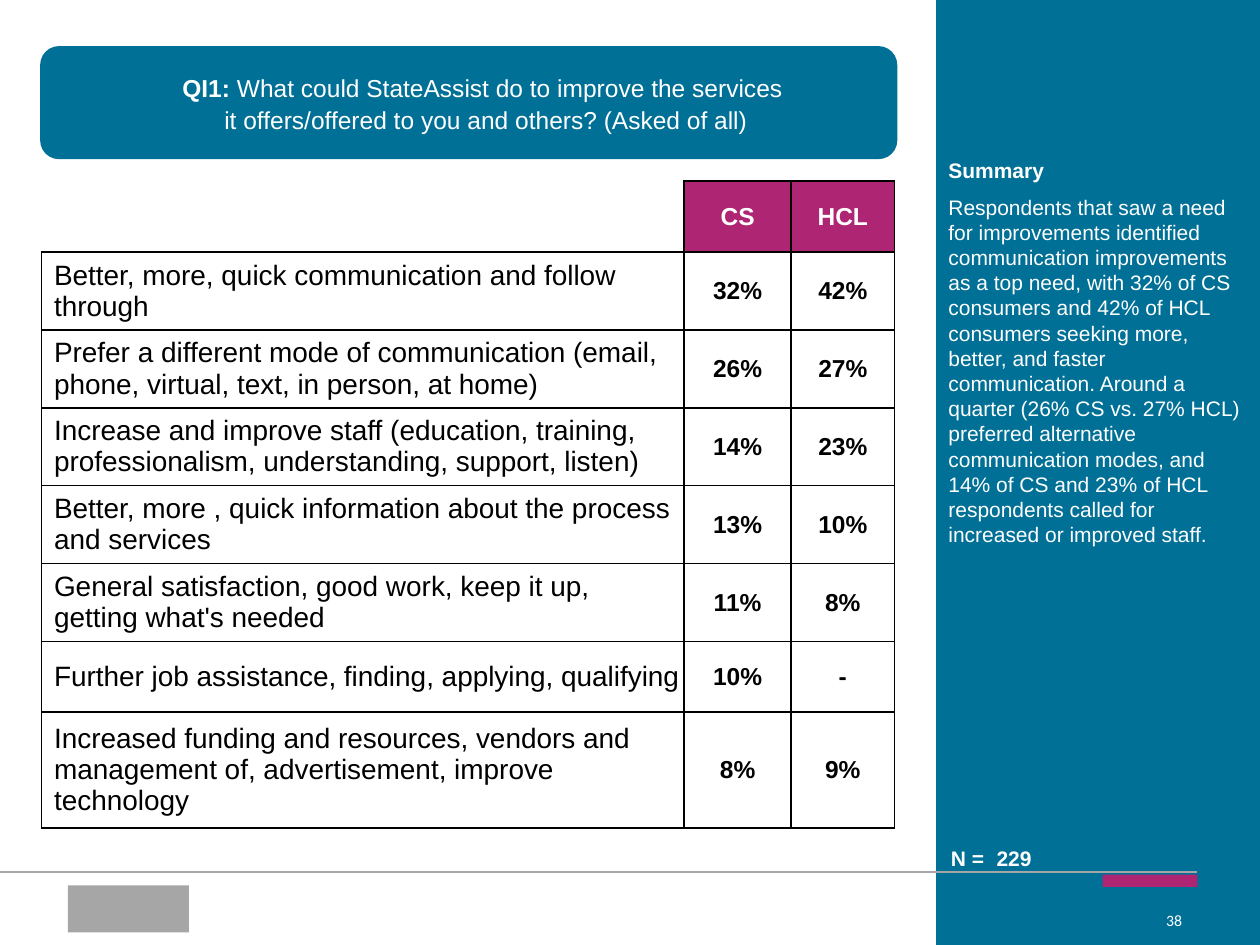
from lxml.etree import SubElement
from pptx import Presentation
from pptx.dml.color import RGBColor
from pptx.enum.shapes import MSO_CONNECTOR, MSO_SHAPE
from pptx.enum.text import MSO_ANCHOR, MSO_AUTO_SIZE, PP_ALIGN
from pptx.oxml.ns import qn
from pptx.util import Cm, Pt

COLORS = {
    "blue": "007096", "magenta": "AE2573", "gray": "A6A6A6",
    "white": "FFFFFF", "black": "000000",
}


def style(para, size, color, bold=False, font="Arial", align=PP_ALIGN.LEFT):
    para.alignment = align
    for span in para.runs:
        span.font.name = font
        span.font.size = Pt(size)
        span.font.bold = bold
        span.font.color.rgb = RGBColor.from_string(COLORS[color])


def add_text(page, place, text):
    box = page.shapes.add_textbox(*map(Cm, place))
    box.text_frame.word_wrap = True
    box.text_frame.text = text
    return box.text_frame


deck = Presentation()
deck.slide_width, deck.slide_height = Cm(25.4), Cm(19.05)
page = deck.slides.add_slide(deck.slide_layouts[5])

# Title panel, sidebar, footer accent and plain footer block
for kind, place, color in (
    (MSO_SHAPE.ROUNDED_RECTANGLE, (0.81, 0.93, 17.28, 2.28), "blue"),
    (MSO_SHAPE.RECTANGLE, (18.87, 0, 6.53, 19.05), "blue"),
    (MSO_SHAPE.RECTANGLE, (22.23, 17.63, 1.91, 0.25), "magenta"),
    (MSO_SHAPE.RECTANGLE, (1.37, 17.85, 2.44, 0.95), "gray"),
):
    panel = page.shapes.add_shape(kind, *map(Cm, place))
    panel.shadow.inherit = False
    panel.fill.solid()
    panel.fill.fore_color.rgb = RGBColor.from_string(COLORS[color])
    panel.line.fill.background()

# Footer rule
rule = page.shapes.add_connector(MSO_CONNECTOR.STRAIGHT, 0, Cm(17.58), Cm(24.13), Cm(17.58))
rule.line.color.rgb = RGBColor.from_string(COLORS["gray"])
rule.line.width = Pt(0.75)
SubElement(rule.element.spPr, qn("a:effectLst"))

# Question title, brought in front of its panel
title = page.shapes.title
title.left, title.top, title.width, title.height = map(Cm, (1.96, 1.35, 15.54, 1.85))
title.element.getparent().append(title.element)
frame = title.text_frame
frame.auto_size = MSO_AUTO_SIZE.NONE
frame.vertical_anchor = MSO_ANCHOR.TOP
frame.text = "QI1: \n it offers/offered to you and others? (Asked of all)"
frame.paragraphs[0].add_run().text = "What could StateAssist do to improve the services"
for para in frame.paragraphs:
    para.space_before = Pt(1.5)
    style(para, 14, "white", align=PP_ALIGN.CENTER)
frame.paragraphs[0].runs[0].font.bold = True

# Sidebar summary and sample size
SUMMARY = (
    "Respondents that saw a need for improvements identified communication "
    "improvements as a top need, with 32% of CS consumers and 42% of HCL "
    "consumers seeking more, better, and faster communication. Around a quarter "
    "(26% CS vs. 27% HCL) preferred alternative communication modes, and 14% of "
    "CS and 23% of HCL respondents called for increased or improved staff."
)
for place, text, bold in (
    ((18.87, 3.05, 6.53, 0.77), "Summary", True),
    ((18.87, 3.79, 6.53, 12.5), SUMMARY, False),
    ((18.92, 16.92, 1.65, 0.77), "N =", True),
    ((19.84, 16.92, 1.3, 0.77), "229", True),
):
    style(add_text(page, place, text).paragraphs[0], 12, "white", bold)

# Page number
frame = add_text(page, (14.5, 18.17, 9.58, 0.76), "38")
frame.vertical_anchor = MSO_ANCHOR.MIDDLE
style(frame.paragraphs[0], 9, "white", font="Calibri", align=PP_ALIGN.RIGHT)

# Table of improvements
ROWS = (
    ("", "CS", "HCL"),
    ("Better, more, quick communication and follow through", "32%", "42%"),
    ("Prefer a different mode of communication (email, phone, virtual, text, "
     "in person, at home)", "26%", "27%"),
    ("Increase and improve staff (education, training, professionalism, "
     "understanding, support, listen)", "14%", "23%"),
    ("Better, more , quick information about the process and services", "13%", "10%"),
    ("General satisfaction, good work, keep it up, getting what's needed", "11%", "8%"),
    ("Further job assistance, finding, applying, qualifying", "10%", "-"),
    ("Increased funding and resources, vendors and management of, "
     "advertisement, improve technology", "8%", "9%"),
)
HEIGHTS = (1.43, *[1.57] * 5, 1.42, 2.34)
table = page.shapes.add_table(len(ROWS), 3, Cm(0.84), Cm(3.65), Cm(17.19), Cm(13.04)).table
table.first_row = table.horz_banding = False
for column, width in zip(table.columns, (12.95, 2.16, 2.08)):
    column.width = Cm(width)
for row, height in zip(table.rows, HEIGHTS):
    row.height = Cm(height)

for r, texts in enumerate(ROWS):
    for c, text in enumerate(texts):
        cell = table.cell(r, c)
        cell.text = text
        cell.vertical_anchor = MSO_ANCHOR.MIDDLE
        cell.margin_left = Cm(0 if c else 0.25)
        cell.margin_right = Cm(0 if c else 0.08)
        cell.margin_top = cell.margin_bottom = 0
        is_corner = r == c == 0
        for side in ("lnR", "lnB") if is_corner else ("lnL", "lnR", "lnT", "lnB"):
            border = SubElement(cell._tc.get_or_add_tcPr(), qn(f"a:{side}"), w=str(Pt(1)))
            SubElement(SubElement(border, qn("a:solidFill")), qn("a:srgbClr"), val=COLORS["black"])
        if r == 0 and c:
            cell.fill.solid()
            cell.fill.fore_color.rgb = RGBColor.from_string(COLORS["magenta"])
        else:
            cell.fill.background()
        para = cell.text_frame.paragraphs[0]
        if c:
            style(para, 14, "black" if r else "white", True, align=PP_ALIGN.CENTER)
        else:
            style(para, 16, "black")

deck.save("out.pptx")
